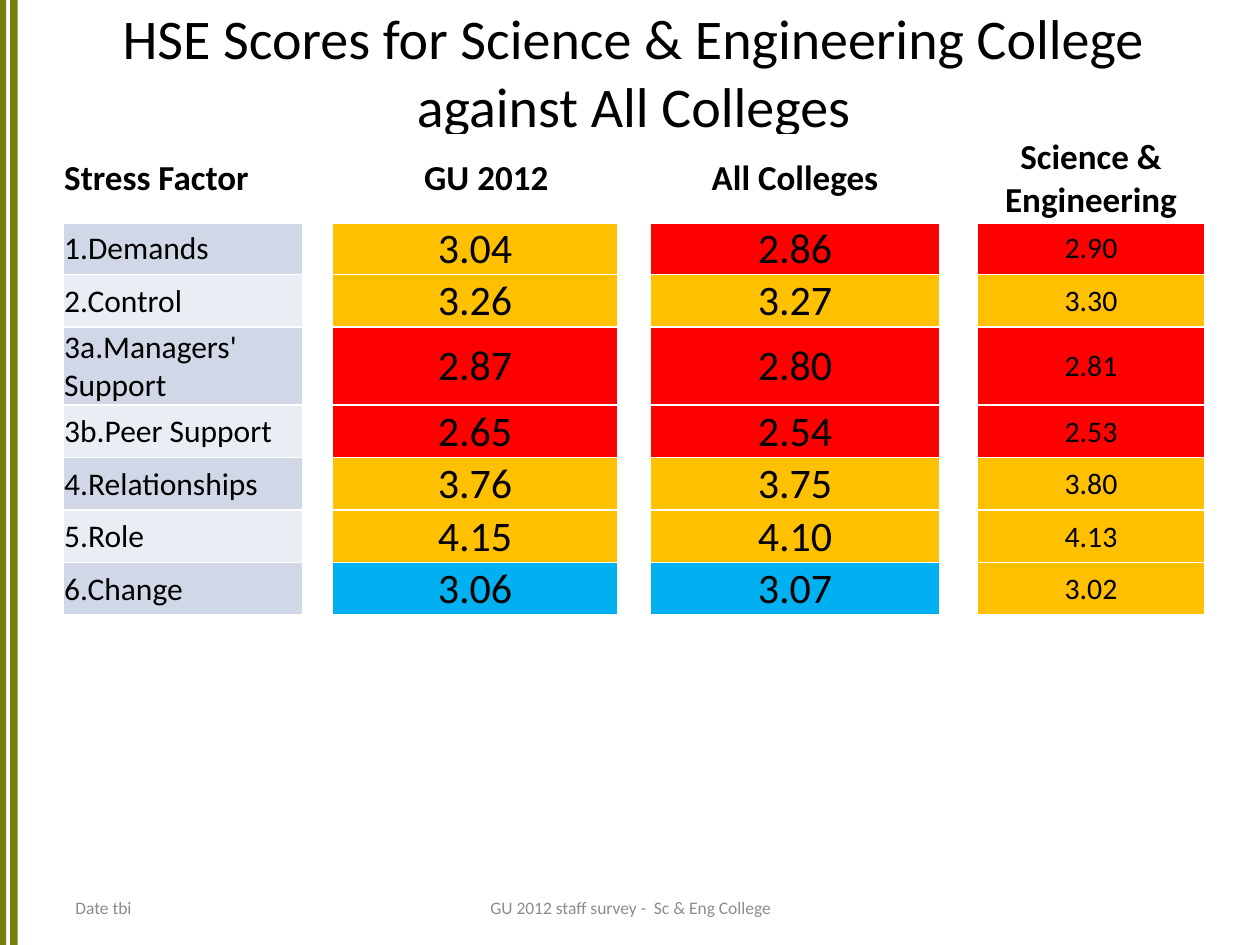
import pptx
import pptx.dml.color
import pptx.enum.shapes
import pptx.enum.text
import pptx.oxml
import pptx.oxml.ns
import pptx.util

Inches = pptx.util.Inches
ALIGN = pptx.enum.text.PP_ALIGN
MIDDLE = pptx.enum.text.MSO_ANCHOR.MIDDLE
AMBER, RED, BLUE = "FFC000", "FF0000", "00B0F0"
HEADINGS = ["Stress Factor", "GU 2012", "All Colleges", "Science & Engineering"]
SCORES = [
    ("1.Demands", ("3.04", AMBER), ("2.86", RED), ("2.90", RED)),
    ("2.Control", ("3.26", AMBER), ("3.27", AMBER), ("3.30", AMBER)),
    ("3a.Managers' Support", ("2.87", RED), ("2.80", RED), ("2.81", RED)),
    ("3b.Peer Support", ("2.65", RED), ("2.54", RED), ("2.53", RED)),
    ("4.Relationships", ("3.76", AMBER), ("3.75", AMBER), ("3.80", AMBER)),
    ("5.Role", ("4.15", AMBER), ("4.10", AMBER), ("4.13", AMBER)),
    ("6.Change", ("3.06", BLUE), ("3.07", BLUE), ("3.02", AMBER)),
]
FACTOR_BANDS = ["D0D8E8", "E9EDF4"]
SCORE_SIZES = [24, 24, 17]
COLUMN_WIDTHS = [1.9, 0.24, 2.26, 0.26, 2.3, 0.3, 1.8]
ROW_HEIGHT = 0.41


def rgb(value):
    """Return the colour for a hex string."""
    return pptx.dml.color.RGBColor.from_string(value)


def write(frame, text, size, color="000000", align=ALIGN.LEFT, bold=False):
    """Put one formatted paragraph into a text frame."""
    frame.text = text
    paragraph = frame.paragraphs[0]
    paragraph.alignment = align
    font = paragraph.font
    font.name, font.size, font.bold = "Calibri", pptx.util.Pt(size), bold
    font.color.rgb = rgb(color)


def add_side_bars(slide, left, top, width, height):
    """Draw the two vertical bars along the slide edge."""
    for offset in (0, 0.09):
        bar = slide.shapes.add_shape(
            pptx.enum.shapes.MSO_SHAPE.RECTANGLE,
            Inches(left + offset), Inches(top), Inches(width), Inches(height))
        bar.shadow.inherit = False
        bar.fill.solid()
        bar.fill.fore_color.rgb = rgb("778109")
        bar.line.fill.background()


def place_title(slide, left, top, width, height):
    """Move and format the title placeholder."""
    title = slide.shapes.title
    title.left, title.top = Inches(left), Inches(top)
    title.width, title.height = Inches(width), Inches(height)
    frame = title.text_frame
    write(frame, "HSE Scores for Science & Engineering College against All Colleges",
          32, align=ALIGN.CENTER)
    frame.vertical_anchor = MIDDLE
    frame.auto_size = pptx.enum.text.MSO_AUTO_SIZE.NONE


def style_cell(cell, fill, is_heading):
    """Give a cell its white borders, margins and fill."""
    properties = cell._tc.get_or_add_tcPr()
    for side in "LRTB":
        width = pptx.util.Pt(3 if is_heading and side == "B" else 1)
        properties.append(pptx.oxml.parse_xml(
            f'<a:ln{side} {pptx.oxml.ns.nsdecls("a")} w="{width}"><a:solidFill>'
            f'<a:srgbClr val="FFFFFF"/></a:solidFill></a:ln{side}>'))
    cell.margin_left = cell.margin_right = cell.margin_top = Inches(0.01)
    cell.margin_bottom = 0
    cell.vertical_anchor = MIDDLE
    if fill:
        cell.fill.solid()
        cell.fill.fore_color.rgb = rgb(fill)
    else:
        cell.fill.background()


def add_score_table(slide, left, top):
    """Build the table of stress factors and scores, with narrow gap columns."""
    row_count = len(SCORES) + 1
    table = slide.shapes.add_table(
        row_count, len(COLUMN_WIDTHS), Inches(left), Inches(top),
        Inches(sum(COLUMN_WIDTHS)), Inches(ROW_HEIGHT * row_count)).table
    for column, width in zip(table.columns, COLUMN_WIDTHS):
        column.width = Inches(width)
    for row in table.rows:
        row.height = Inches(ROW_HEIGHT)
    for row in range(row_count):
        for gap in range(1, len(COLUMN_WIDTHS), 2):
            style_cell(table.cell(row, gap), None, row == 0)
    for index, heading in enumerate(HEADINGS):
        cell = table.cell(0, index * 2)
        style_cell(cell, "FFFFFF" if index else None, True)
        write(cell.text_frame, heading, 20, bold=True,
              align=ALIGN.CENTER if index else ALIGN.LEFT)
    table.cell(0, 2).margin_left = Inches(0.19)
    for row, (factor, *scores) in enumerate(SCORES, 1):
        factor_cell = table.cell(row, 0)
        style_cell(factor_cell, FACTOR_BANDS[(row - 1) % 2], False)
        write(factor_cell.text_frame, factor, 18)
        for index, ((score, fill), size) in enumerate(zip(scores, SCORE_SIZES), 1):
            score_cell = table.cell(row, index * 2)
            style_cell(score_cell, fill, False)
            write(score_cell.text_frame, score, size, align=ALIGN.CENTER)


def add_footer(slide, left, top, width, height, text, align):
    """Add one grey footer text."""
    footer = slide.shapes.add_textbox(
        Inches(left), Inches(top), Inches(width), Inches(height))
    frame = footer.text_frame
    frame.word_wrap = True
    frame.vertical_anchor = MIDDLE
    write(frame, text, 10, "8C8C8C", align)


def main():
    """Build and save the slide."""
    deck = pptx.Presentation()
    deck.slide_width, deck.slide_height = Inches(10), Inches(7.5)
    slide = deck.slides.add_slide(deck.slide_layouts[5])
    add_side_bars(slide, -0.01, 0, 0.06, 7.5)
    place_title(slide, 0.5, 0.13, 9.06, 0.87)
    add_score_table(slide, 0.5, 1.07)
    add_footer(slide, 0.5, 7.06, 2.33, 0.29, "Date tbi", ALIGN.LEFT)
    add_footer(slide, 3.42, 7.06, 3.17, 0.29,
               "GU 2012 staff survey -  Sc & Eng College", ALIGN.CENTER)
    deck.save("out.pptx")


if __name__ == "__main__":
    main()
